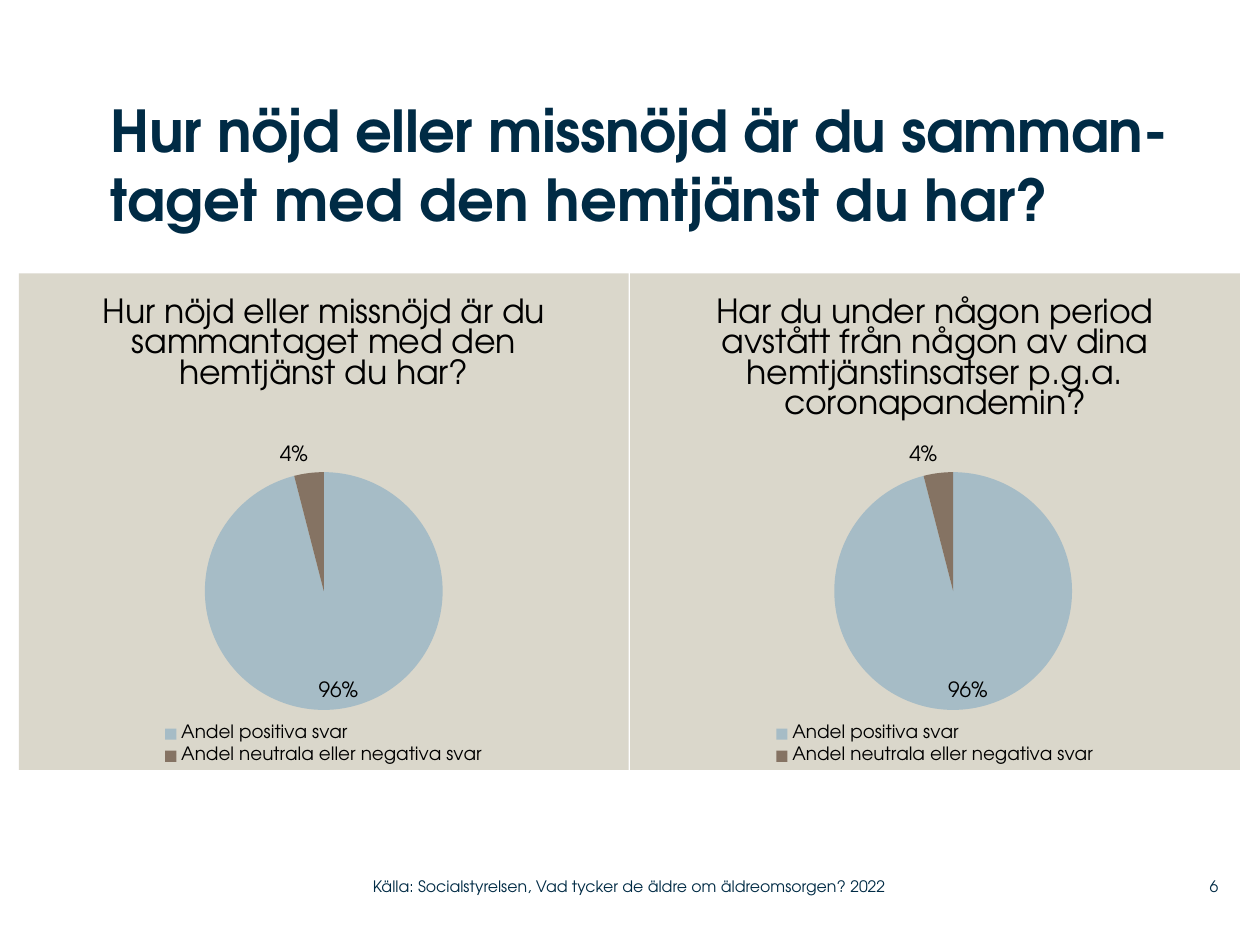
from dataclasses import dataclass

import pptx
import pptx.chart.data
import pptx.dml.color
import pptx.enum.chart
import pptx.enum.text
import pptx.oxml
import pptx.oxml.ns
import pptx.util

FONT = "TeX Gyre Adventor"
INK = {"navy": "002B45", "black": "000000", "panel": "DAD7CB",
       "blue": "A6BCC6", "brown": "857363"}
WIDE, HIGH = 10, 7.5
LEFT, TOP, COL, ROW = 0.15, 2.17, 4.85, 3.94
GAP = 0.01
CATS = ("Andel positiva svar", "Andel neutrala eller negativa svar")
Box = tuple[float, float, float, float]
Align = pptx.enum.text.PP_ALIGN
Anchor = pptx.enum.text.MSO_ANCHOR


@dataclass
class Pie:
    col: int
    title: str
    plot: Box


@dataclass
class Note:
    text: str
    box: Box
    align: Align


PIES = (
    Pie(0, "Hur nöjd eller missnöjd är du sammantaget med den hemtjänst du har?",
        (0.305, 0.4, 0.39, 0.48)),
    Pie(1, "Har du under någon period avstått från någon av dina "
        "hemtjänstinsatser p.g.a. coronapandemin?", (0.335, 0.4, 0.39, 0.48)),
)
NOTES = (
    Note("Källa: Socialstyrelsen, Vad tycker de äldre om äldreomsorgen? 2022",
         (2.96, 6.89, 4.43, 0.29), Align.LEFT),
    Note("6", (9.2, 6.89, 0.47, 0.29), Align.RIGHT),
)


def inches(box: Box) -> list[pptx.util.Length]:
    return [pptx.util.Inches(side) for side in box]


def tint(name: str) -> pptx.dml.color.RGBColor:
    return pptx.dml.color.RGBColor.from_string(INK[name])


def style(font, size: float, ink: str, bold: bool = False) -> None:
    font.name, font.size, font.bold = FONT, pptx.util.Pt(size), bold
    font.color.rgb = tint(ink)


def paint(fill, ink: str) -> None:
    fill.solid()
    fill.fore_color.rgb = tint(ink)


def clear(frame, anchor: Anchor) -> None:
    """Wrap the text and drop the insets."""
    frame.word_wrap = True
    frame.auto_size = pptx.enum.text.MSO_AUTO_SIZE.NONE
    frame.vertical_anchor = anchor
    frame.margin_left = frame.margin_right = 0
    frame.margin_top = frame.margin_bottom = 0


def add_title(slide) -> None:
    title = slide.shapes.title
    title.left, title.top, title.width, title.height = inches((0.88, 0.75, 8.94, 1.42))
    clear(title.text_frame, Anchor.TOP)
    para = title.text_frame.paragraphs[0]
    para.alignment = Align.LEFT
    for text, space in (("Hur nöjd eller missnöjd är du samman-", "-30"),
                        ("taget med den hemtjänst du har?", "0")):
        run = para.add_run()
        run.text = text
        style(run.font, 33, "navy", True)
        run.font._element.set("spc", space)


def place(plot, box: Box) -> None:
    """Fix the inner plot area as shares of the chart."""
    for old in plot.findall(pptx.oxml.ns.qn("c:layout")):
        plot.remove(old)
    parts = "".join(f'<c:{key} val="{val}"/>' for key, val in (
        ("layoutTarget", "inner"), ("xMode", "edge"), ("yMode", "edge"),
        *zip("xywh", box)))
    plot.insert(0, pptx.oxml.parse_xml(
        f'<c:layout {pptx.oxml.ns.nsdecls("c")}>'
        f"<c:manualLayout>{parts}</c:manualLayout></c:layout>"))


def add_pie(slide, pie: Pie) -> None:
    data = pptx.chart.data.CategoryChartData()
    data.categories = CATS
    data.add_series("Series 1", (96, 4))
    box = (LEFT + pie.col * COL, TOP, COL - GAP, ROW)
    chart = slide.shapes.add_chart(
        pptx.enum.chart.XL_CHART_TYPE.PIE, *inches(box), data).chart
    style(chart.font, 18, "black")

    chart.has_title = True
    run = chart.chart_title.text_frame.paragraphs[0].add_run()
    run.text = pie.title
    style(run.font, 19, "black")
    chart.chart_title.include_in_layout = False

    chart.has_legend = True
    chart.legend.position = pptx.enum.chart.XL_LEGEND_POSITION.BOTTOM
    chart.legend.include_in_layout = False
    style(chart.legend.font, 10.5, "black")

    plot = chart.plots[0]
    plot.vary_by_categories = True
    for spot, ink in enumerate(("blue", "brown")):
        paint(plot.series[0].points[spot].format.fill, ink)
    plot.has_data_labels = True
    tags = plot.data_labels
    tags.show_percentage, tags.show_value = True, False
    tags.number_format, tags.number_format_is_linked = "0%", False
    tags.position = pptx.enum.chart.XL_LABEL_POSITION.BEST_FIT
    style(tags.font, 12, "black")

    space = chart._chartSpace
    place(space.chart.plotArea, pie.plot)
    back = pptx.oxml.parse_xml(
        f'<c:spPr {pptx.oxml.ns.nsdecls("c", "a")}><a:solidFill>'
        f'<a:srgbClr val="{INK["panel"]}"/></a:solidFill>'
        "<a:ln><a:noFill/></a:ln></c:spPr>")
    space.chart.addnext(back)


def add_note(slide, note: Note) -> None:
    frame = slide.shapes.add_textbox(*inches(note.box)).text_frame
    clear(frame, Anchor.MIDDLE)
    para = frame.paragraphs[0]
    para.alignment = note.align
    run = para.add_run()
    run.text = note.text
    style(run.font, 9, "navy")


def main() -> None:
    deck = pptx.Presentation()
    deck.slide_width, deck.slide_height = inches((WIDE, HIGH))
    slide = deck.slides.add_slide(deck.slide_layouts[5])
    add_title(slide)
    for pie in PIES:
        add_pie(slide, pie)
    for note in NOTES:
        add_note(slide, note)
    deck.save("out.pptx")


if __name__ == "__main__":
    main()
